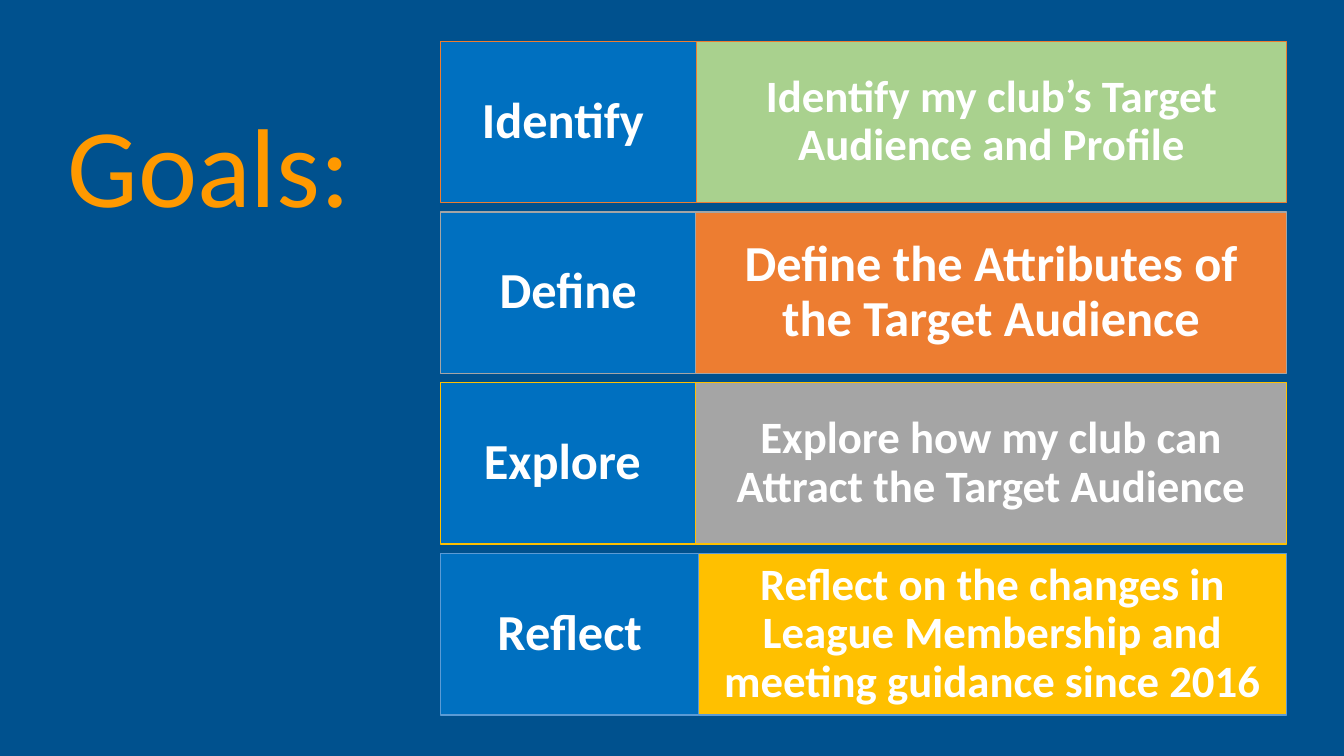
from lxml import etree
from pptx import Presentation
from pptx.dml.color import RGBColor
from pptx.enum import shapes, text
from pptx.oxml import ns
from pptx.util import Inches, Pt

NAVY = RGBColor(0x00, 0x51, 0x8E)
BLUE = RGBColor(0x00, 0x70, 0xC0)
AMBER = RGBColor(0xFF, 0x99, 0x00)
GREEN = RGBColor(0xA9, 0xD1, 0x8E)
ORANGE = RGBColor(0xED, 0x7D, 0x31)
GRAY = RGBColor(0xA5, 0xA5, 0xA5)
GOLD = RGBColor(0xFF, 0xC0, 0x00)
SKY = RGBColor(0x5B, 0x9B, 0xD5)
WHITE = RGBColor(0xFF, 0xFF, 0xFF)

LEFT, RIGHT = 4.37, 12.76
TOP, ROW_HEIGHT, ROW_STEP = 0.41, 1.6, 1.694

GOALS = [
    ("Identify ", "Identify my club’s Target Audience and Profile", 32, GREEN, ORANGE, 6.91),
    ("Define", "Define the Attributes of the Target Audience", 36, ORANGE, GRAY, 6.9),
    ("Explore ", "Explore how my club can Attract the Target Audience", 32, GRAY, GOLD, 6.9),
    ("Reflect", "Reflect on the changes in League Membership and meeting guidance since 2016",
     32, GOLD, SKY, 6.93),
]


def format_text(text_frame, size, color):
    text_frame.word_wrap = True
    text_frame.vertical_anchor = text.MSO_ANCHOR.MIDDLE
    paragraph = text_frame.paragraphs[0]
    paragraph.line_spacing = 0.9
    font = paragraph.runs[0].font
    font.name = "Calibri"
    font.size = Pt(size)
    font.color.rgb = color
    return paragraph


def add_cell(slide, left, right, top, label, size, fill, line, inset_x, inset_y):
    cell = slide.shapes.add_shape(
        shapes.MSO_SHAPE.RECTANGLE,
        Inches(left), Inches(top), Inches(right - left), Inches(ROW_HEIGHT))
    cell.shadow.inherit = False
    cell.fill.solid()
    cell.fill.fore_color.rgb = fill
    cell.line.color.rgb = line
    cell.line.width = Pt(1)
    text_frame = cell.text_frame
    text_frame.text = label
    text_frame.margin_left = text_frame.margin_right = Inches(inset_x)
    text_frame.margin_top = text_frame.margin_bottom = Inches(inset_y)
    paragraph = format_text(text_frame, size, WHITE)
    paragraph.alignment = text.PP_ALIGN.CENTER
    paragraph.runs[0].font.bold = True


presentation = Presentation()
presentation.slide_width = Inches(13.33)
presentation.slide_height = Inches(7.5)
slide = presentation.slides.add_slide(presentation.slide_layouts[5])
slide.background.fill.solid()
slide.background.fill.fore_color.rgb = NAVY

title = slide.shapes.title
title.left, title.top = Inches(0.57), Inches(0.34)
title.width, title.height = Inches(3.47), Inches(2.71)
title.text_frame.text = "Goals:"
title.text_frame.auto_size = text.MSO_AUTO_SIZE.NONE
paragraph = format_text(title.text_frame, 80, AMBER)
paragraph.alignment = text.PP_ALIGN.LEFT
outline = etree.Element(ns.qn("a:ln"), w=str(Pt(0.75)))
outline_fill = etree.SubElement(outline, ns.qn("a:solidFill"))
etree.SubElement(outline_fill, ns.qn("a:srgbClr"), val=str(GOLD))
paragraph.runs[0]._r.get_or_add_rPr().insert(0, outline)

for row, (verb, goal, size, fill, line, divider) in enumerate(GOALS):
    top = TOP + row * ROW_STEP
    add_cell(slide, divider, RIGHT, top, goal, size, fill, line, 0.11, 0.41)
    add_cell(slide, LEFT, divider, top, verb, 36, BLUE, line, 0.08, 0.16)

presentation.save("out.pptx")
